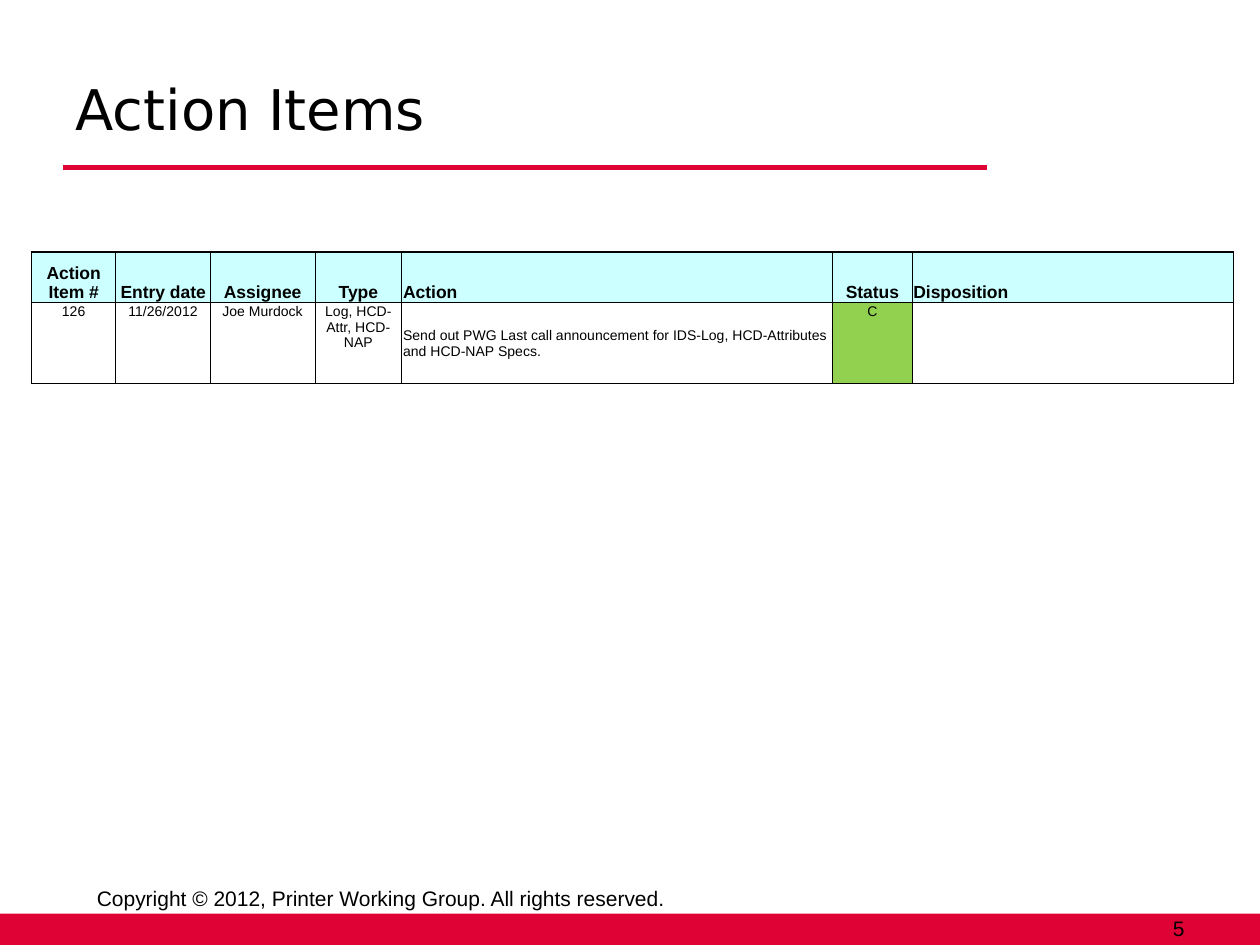
"""Build the Action Items slide with its one-row tracking table."""
import dataclasses

import lxml.etree
import pptx
import pptx.dml.color
import pptx.enum.shapes
import pptx.enum.text
import pptx.oxml.ns
import pptx.util

Inches = pptx.util.Inches
Pt = pptx.util.Pt
ALIGN = pptx.enum.text.PP_ALIGN
ANCHOR = pptx.enum.text.MSO_ANCHOR
COLORS = {"black": "000000", "red": "DE0235", "header": "CCFFFF", "closed": "92D050"}
HEADER_FORMAT = {"name": "Arial", "size": Pt(10), "bold": True}
BODY_FORMAT = {"name": "Arial", "size": Pt(8), "bold": False}
FOOTER_FORMAT = {"name": "Arial", "size": Pt(12)}
TITLE_FORMAT = {"name": "DejaVu Sans", "size": Pt(32)}
CELL_MARGINS = {
    "margin_left": Inches(0.01),
    "margin_right": Inches(0.01),
    "margin_top": Inches(0.01),
    "margin_bottom": Inches(0),
}
ROW_HEIGHTS = (0.4, 0.64)


@dataclasses.dataclass(frozen=True)
class Label:
    text: str
    left: float
    top: float
    width: float
    height: float
    font_format: dict
    align: ALIGN = ALIGN.LEFT


@dataclasses.dataclass(frozen=True)
class Column:
    heading: str
    entry: str
    width: float
    align: ALIGN = ALIGN.CENTER
    entry_anchor: ANCHOR = ANCHOR.TOP
    entry_fill: str = ""


LABELS = (
    Label("5", 7.17, 7.24, 2.33, 0.25, FOOTER_FORMAT, ALIGN.RIGHT),
    Label("Copyright © 2012, Printer Working Group. All rights reserved.",
          0.67, 7, 4.92, 0.25, FOOTER_FORMAT),
    Label("Action Items", 0.5, 0.38, 7.25, 0.95, TITLE_FORMAT),
)
COLUMNS = (
    Column("Action Item #", "126", 0.67),
    Column("Entry date", "11/26/2012", 0.75),
    Column("Assignee", "Joe Murdock", 0.83),
    Column("Type", "Log, HCD-Attr, HCD-NAP", 0.69),
    Column("Action",
           "Send out PWG Last call announcement for IDS-Log, HCD-Attributes and HCD-NAP Specs.",
           3.42, ALIGN.LEFT, ANCHOR.MIDDLE),
    Column("Status", "C", 0.63, entry_fill="closed"),
    Column("Disposition", "", 2.55, ALIGN.LEFT),
)


def rgb(color: str) -> pptx.dml.color.RGBColor:
    """Return the named palette colour."""
    return pptx.dml.color.RGBColor.from_string(COLORS[color])


def set_attributes(target, values: dict) -> None:
    """Set each named attribute on the target."""
    for name, value in values.items():
        setattr(target, name, value)


def write_paragraph(frame, text: str, font_format: dict, align: ALIGN) -> None:
    """Write one formatted black paragraph into a text frame."""
    paragraph = frame.paragraphs[0]
    paragraph.alignment = align
    if text:
        paragraph.add_run().text = text
    for font in [paragraph.font] + [run.font for run in paragraph.runs]:
        set_attributes(font, font_format)
        font.color.rgb = rgb("black")


def add_label(slide, label: Label) -> None:
    """Add a vertically centred text box."""
    box = slide.shapes.add_textbox(
        *map(Inches, (label.left, label.top, label.width, label.height)))
    frame = box.text_frame
    frame.word_wrap = True
    frame.vertical_anchor = ANCHOR.MIDDLE
    write_paragraph(frame, label.text, label.font_format, label.align)


def add_red_trim(slide) -> None:
    """Add the footer band and the rule under the title."""
    band = slide.shapes.add_shape(
        pptx.enum.shapes.MSO_SHAPE.RECTANGLE, *map(Inches, (0, 7.25, 10, 0.25)))
    band.shadow.inherit = False
    band.fill.solid()
    band.fill.fore_color.rgb = rgb("red")
    band.line.fill.background()
    rule = slide.shapes.add_connector(
        pptx.enum.shapes.MSO_CONNECTOR.STRAIGHT, *map(Inches, (0.5, 1.33, 7.83, 1.33)))
    rule.line.color.rgb = rgb("red")
    rule.line.width = Pt(3)
    lxml.etree.SubElement(rule._element.spPr, pptx.oxml.ns.qn("a:effectLst"))


def set_borders(cell, widths: dict) -> None:
    """Draw black cell borders with a point width for each side."""
    properties = cell._tc.get_or_add_tcPr()
    for side, width in widths.items():
        line = lxml.etree.SubElement(
            properties, pptx.oxml.ns.qn(f"a:ln{side}"), w=str(Pt(width)))
        fill = lxml.etree.SubElement(line, pptx.oxml.ns.qn("a:solidFill"))
        lxml.etree.SubElement(fill, pptx.oxml.ns.qn("a:srgbClr"), val=COLORS["black"])


def fill_cell(cell, text: str, font_format: dict, align: ALIGN,
              anchor: ANCHOR, color: str) -> None:
    """Write, place and colour the content of one cell."""
    set_attributes(cell, CELL_MARGINS)
    cell.vertical_anchor = anchor
    write_paragraph(cell.text_frame, text, font_format, align)
    if color:
        cell.fill.solid()
        cell.fill.fore_color.rgb = rgb(color)
    else:
        cell.fill.background()


def add_action_table(slide) -> None:
    """Add the action item table."""
    table = slide.shapes.add_table(
        len(ROW_HEIGHTS), len(COLUMNS), Inches(0.25), Inches(2),
        Inches(sum(column.width for column in COLUMNS)), Inches(sum(ROW_HEIGHTS))).table
    table.first_row = table.horz_banding = False
    for row, height in zip(table.rows, ROW_HEIGHTS):
        row.height = Inches(height)
    last = len(COLUMNS) - 1
    for index, column in enumerate(COLUMNS):
        table.columns[index].width = Inches(column.width)
        heading, entry = table.cell(0, index), table.cell(1, index)
        sides = {"L": 1 if index == 0 else 0.5, "R": 1 if index == last else 0.5}
        set_borders(heading, {**sides, "T": 1, "B": 0.5})
        set_borders(entry, {**sides, "T": 0.5, "B": 0.5})
        fill_cell(heading, column.heading, HEADER_FORMAT, column.align,
                  ANCHOR.BOTTOM, "header")
        fill_cell(entry, column.entry, BODY_FORMAT, column.align,
                  column.entry_anchor, column.entry_fill)


def main() -> None:
    """Build and save the slide."""
    deck = pptx.Presentation()
    set_attributes(deck, {"slide_width": Inches(10), "slide_height": Inches(7.5)})
    slide = deck.slides.add_slide(deck.slide_layouts[6])
    add_red_trim(slide)
    for label in LABELS:
        add_label(slide, label)
    add_action_table(slide)
    deck.save("out.pptx")


if __name__ == "__main__":
    main()
